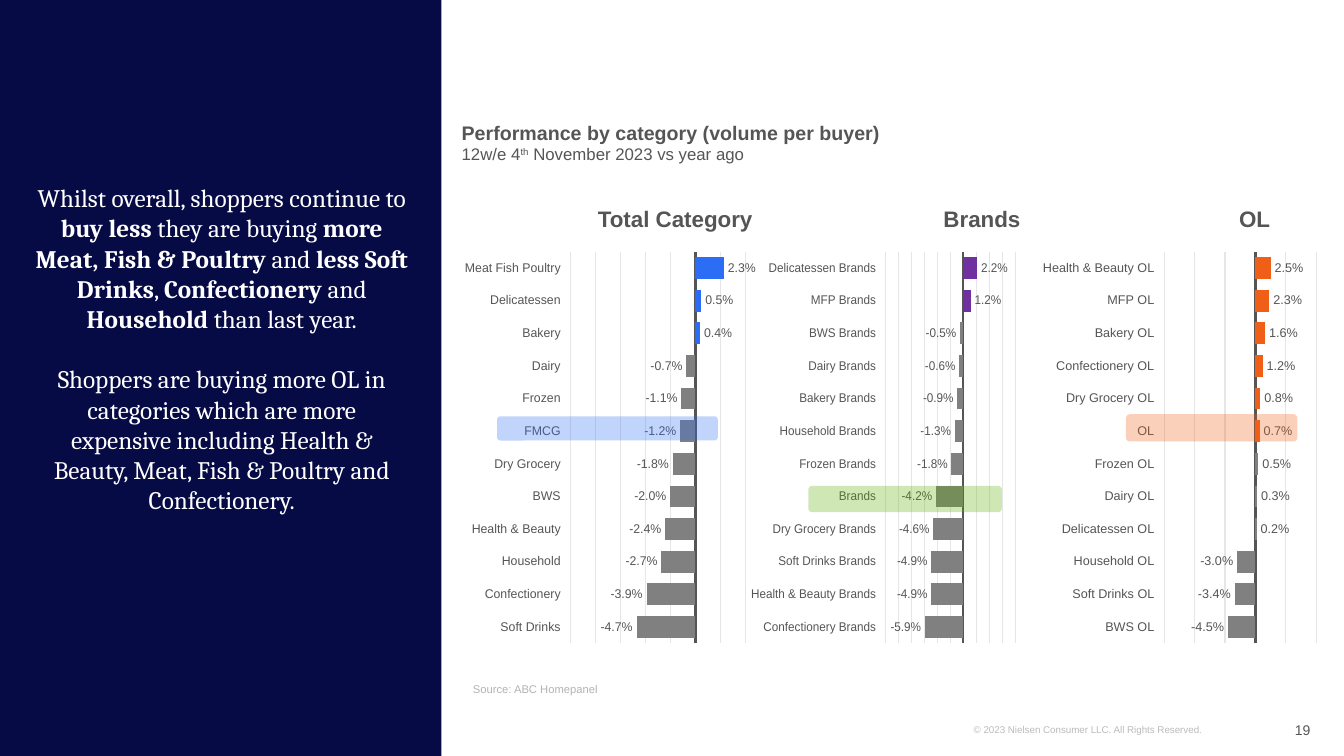
from lxml.etree import SubElement
from pptx import Presentation
from pptx.chart.data import CategoryChartData
from pptx.dml.color import RGBColor
from pptx.enum.chart import XL_CHART_TYPE as ChartType
from pptx.enum.chart import XL_LABEL_POSITION as LabelPos
from pptx.enum.chart import XL_TICK_LABEL_POSITION as TickLabelPos
from pptx.enum.chart import XL_TICK_MARK as TickMark
from pptx.enum.shapes import MSO_SHAPE as Preset
from pptx.enum.text import MSO_ANCHOR as Anchor
from pptx.enum.text import MSO_AUTO_SIZE as AutoSize
from pptx.enum.text import PP_ALIGN as Align
from pptx.oxml.ns import qn
from pptx.util import Inches, Pt

WIDTH, HEIGHT = Inches(13.33), Inches(7.5)
COLORS = {
    "navy": "060A45", "white": "FFFFFF", "text": "555555", "source": "B3B3B3",
    "copyright": "BBBBBB", "grid": "E6E6E6", "bar": "808080", "blue": "2C6DF6",
    "purple": "7030A0", "green": "59AD00", "orange": "EF5F17",
}
CHART_TOP, CHART_HEIGHT = 31.6, 56.93

COMMENTARY = [
    "Whilst overall, shoppers continue to **buy less** they are buying **more Meat, "
    "Fish & Poultry **and **less Soft Drinks**, **Confectionery **and **Household** "
    "than last year.",
    "Shoppers are buying more OL in categories which are more expensive including "
    "Health & Beauty, Meat, Fish & Poultry and Confectionery.",
]
TOTAL = {
    "Meat Fish Poultry": 2.3, "Delicatessen": 0.5, "Bakery": 0.4, "Dairy": -0.7,
    "Frozen": -1.1, "FMCG": -1.2, "Dry Grocery": -1.8, "BWS": -2.0,
    "Health & Beauty": -2.4, "Household": -2.7, "Confectionery": -3.9,
    "Soft Drinks": -4.7,
}
BRANDS = {
    "Delicatessen Brands": 2.2, "MFP Brands": 1.2, "BWS Brands": -0.5,
    "Dairy Brands": -0.6, "Bakery Brands": -0.9, "Household Brands": -1.3,
    "Frozen Brands": -1.8, "Brands": -4.2, "Dry Grocery Brands": -4.6,
    "Soft Drinks Brands": -4.9, "Health & Beauty Brands": -4.9,
    "Confectionery Brands": -5.9,
}
OWN_LABEL = {
    "Health & Beauty OL": 2.5, "MFP OL": 2.3, "Bakery OL": 1.6,
    "Confectionery OL": 1.2, "Dry Grocery OL": 0.8, "OL": 0.7, "Frozen OL": 0.5,
    "Dairy OL": 0.3, "Delicatessen OL": 0.2, "Household OL": -3.0,
    "Soft Drinks OL": -3.4, "BWS OL": -4.5,
}


def color(name):
    return RGBColor.from_string(COLORS[name])


def area(left, top, width, height):
    """Turn percentages of the slide into a position and size."""
    return (int(WIDTH * left / 100), int(HEIGHT * top / 100),
            int(WIDTH * width / 100), int(HEIGHT * height / 100))


def style_font(font, size, ink="text", face="Arial", bold=False):
    font.size, font.name, font.bold = Pt(size), face, bold
    font.color.rgb = color(ink)


def write(frame, paragraphs, size, second_size=None, ink="text", face="Arial",
          bold=False, align=Align.LEFT, anchor=Anchor.TOP, inset=0, gap=0, wrap=True):
    """Fill a text frame; ** toggles bold and ^^ toggles superscript."""
    frame.word_wrap, frame.auto_size = wrap, AutoSize.NONE
    frame.vertical_anchor = anchor
    frame.margin_left = frame.margin_right = Inches(inset)
    frame.margin_top = frame.margin_bottom = Inches(0.05)
    for row, line in enumerate(paragraphs):
        paragraph = frame.add_paragraph() if row else frame.paragraphs[0]
        paragraph.alignment = align
        paragraph.space_before = Pt(gap if row else 0)
        for strong, part in enumerate(line.split("**")):
            for raised, words in enumerate(part.split("^^")):
                if not words:
                    continue
                run = paragraph.add_run()
                run.text = words
                later = row and second_size
                style_font(run.font, second_size if later else size, ink, face,
                           strong % 2 == 1 or (bold and not later))
                if raised % 2:
                    run._r.get_or_add_rPr().set("baseline", "30000")


def add_text(slide, box, paragraphs, **fmt):
    write(slide.shapes.add_textbox(*area(*box)).text_frame, paragraphs, **fmt)


def fill_placeholder(placeholder, box, paragraphs, **fmt):
    (placeholder.left, placeholder.top,
     placeholder.width, placeholder.height) = area(*box)
    write(placeholder.text_frame, paragraphs, **fmt)


def remove_bullets(frame):
    for paragraph in frame.paragraphs:
        properties = paragraph._p.get_or_add_pPr()
        properties.set("marL", "0")
        properties.set("indent", "0")
        SubElement(properties, qn("a:buNone"))


def add_block(slide, preset, box, fill, opacity=100):
    block = slide.shapes.add_shape(preset, *area(*box))
    block.shadow.inherit = False
    block.fill.solid()
    block.fill.fore_color.rgb = color(fill)
    block.line.fill.background()
    if opacity < 100:
        tint = block.fill._xPr.find(".//" + qn("a:srgbClr"))
        SubElement(tint, qn("a:alpha")).set("val", str(opacity * 1000))
    return block


def add_highlight(slide, box, fill):
    add_block(slide, Preset.ROUNDED_RECTANGLE, box, fill, 29).adjustments[0] = 0.14


def set_plot_area(chart, left, top, width, height):
    """Fix the inner plot area as shares of the chart."""
    plot_area = chart._chartSpace.chart.plotArea
    layout = plot_area.find(qn("c:layout"))
    if layout is None:
        layout = SubElement(plot_area, qn("c:layout"))
        plot_area.insert(0, layout)
    manual = SubElement(layout, qn("c:manualLayout"))
    settings = {"layoutTarget": "inner", "xMode": "edge", "yMode": "edge",
                "x": left, "y": top, "w": width, "h": height}
    for tag, setting in settings.items():
        SubElement(manual, qn("c:" + tag)).set("val", str(setting))


def add_change_chart(slide, left, width, changes, accent, accented, scale, plot_share):
    """Bar chart of percentage changes; the first bars take the accent colour."""
    data = CategoryChartData(number_format="0.0%")
    data.categories = list(changes)
    data.add_series("Series 1", [round(change / 100, 3) for change in changes.values()])
    chart = slide.shapes.add_chart(
        ChartType.BAR_CLUSTERED, *area(left, CHART_TOP, width, CHART_HEIGHT), data).chart
    chart.has_legend = chart.has_title = False
    style_font(chart.font, 9)
    set_plot_area(chart, *plot_share)

    categories = chart.category_axis
    categories.reverse_order = True
    categories.tick_label_position = TickLabelPos.LOW
    categories.major_tick_mark = categories.minor_tick_mark = TickMark.NONE
    categories.has_major_gridlines = False
    style_font(categories.tick_labels.font, 9)
    categories.format.line.color.rgb = color("text")
    categories.format.line.width = Pt(2)

    values = chart.value_axis
    values.minimum_scale, values.maximum_scale, values.major_unit = scale
    values.visible = False
    values.has_major_gridlines = True
    values.major_gridlines.format.line.color.rgb = color("grid")
    values.major_gridlines.format.line.width = Pt(0.75)

    plot = chart.plots[0]
    plot.gap_width, plot.vary_by_categories = 50, False
    plot.has_data_labels = True
    labels = plot.data_labels
    labels.show_value, labels.position = True, LabelPos.OUTSIDE_END
    labels.number_format, labels.number_format_is_linked = "0.0%", False
    style_font(labels.font, 9)
    bars = plot.series[0]
    bars.invert_if_negative = False
    bars.format.fill.solid()
    bars.format.fill.fore_color.rgb = color("bar")
    for index in range(accented):
        fill = bars.points[index].format.fill
        fill.solid()
        fill.fore_color.rgb = color(accent)


def main():
    deck = Presentation()
    deck.slide_width, deck.slide_height = WIDTH, HEIGHT
    slide = deck.slides.add_slide(deck.slide_layouts[1])
    source = slide.placeholders[1]

    fill_placeholder(slide.shapes.title, (34.35, 15.27, 48.38, 6.93),
                     ["Performance by category (volume per buyer)",
                      "12w/e 4^^th^^ November 2023 vs year ago"],
                     size=14, second_size=12, bold=True)
    fill_placeholder(source, (35.18, 87.33, 62.33, 5.33), ["Source: ABC Homepanel"],
                     size=8, ink="source", anchor=Anchor.BOTTOM)
    remove_bullets(source.text_frame)

    add_block(slide, Preset.RECTANGLE, (0, 0, 32.85, 100), "navy")
    add_text(slide, (1.88, 23.47, 29.25, 57.87), COMMENTARY, size=18, ink="white",
             face="Cambria", align=Align.CENTER, inset=0.1, gap=21.6)

    add_change_chart(slide, 32.85, 23.4, TOTAL, "blue", 3,
                     (-0.1, 0.04, 0.02), (0.42, 0.03, 0.57, 0.91))
    add_change_chart(slide, 55.88, 21.23, BRANDS, "purple", 2,
                     (-0.12, 0.08, 0.02), (0.43, 0.03, 0.49, 0.91))
    add_change_chart(slide, 77.4, 21.45, OWN_LABEL, "orange", 6,
                     (-0.15, 0.12, 0.05), (0.43, 0.03, 0.57, 0.91))

    add_highlight(slide, (36.98, 55.07, 16.43, 3.2), "blue")
    add_highlight(slide, (60.15, 64.27, 14.4, 3.47), "green")
    add_highlight(slide, (83.78, 54.8, 12.75, 3.6), "orange")

    for heading, left, align in (("Total Category", 44.48, Align.LEFT),
                                 ("Brands", 70.2, Align.LEFT),
                                 ("OL", 87.38, Align.CENTER)):
        add_text(slide, (left, 26.5, 11.93, 4.4), [heading], size=16, bold=True,
                 align=align, wrap=False)

    add_text(slide, (72.45, 95.07, 21.3, 2.93),
             ["© 2023 Nielsen Consumer LLC. All Rights Reserved."],
             size=7, ink="copyright")
    add_text(slide, (90.08, 93.87, 7.43, 5.33), ["19"], size=10, align=Align.RIGHT,
             anchor=Anchor.MIDDLE)
    deck.save("out.pptx")


if __name__ == "__main__":
    main()
